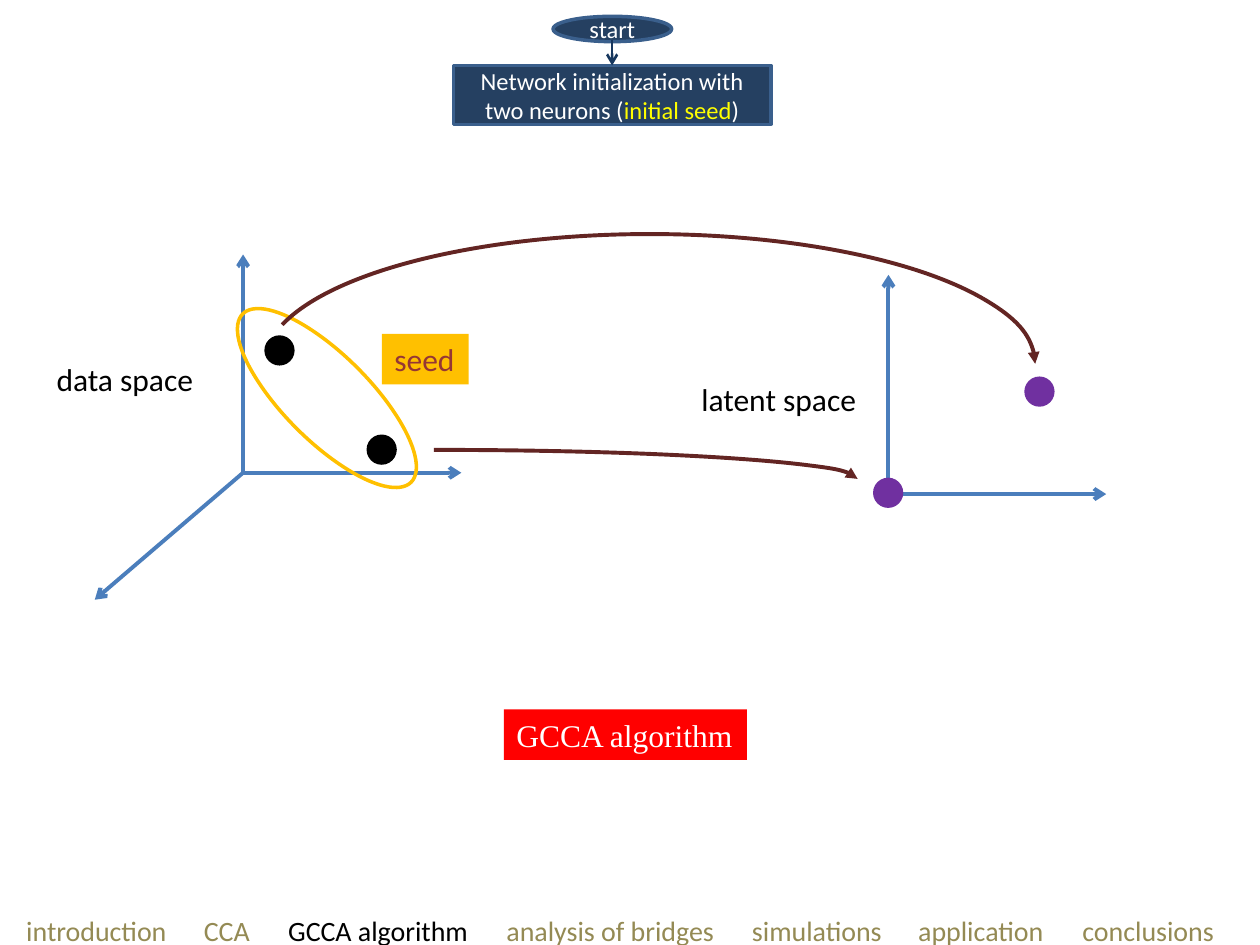
from dataclasses import dataclass

import pptx
import pptx.dml.color
import pptx.enum.shapes
import pptx.enum.text
import pptx.oxml
import pptx.oxml.ns
import pptx.util

Cm, Pt = pptx.util.Cm, pptx.util.Pt
RGBColor = pptx.dml.color.RGBColor
SHAPE = pptx.enum.shapes.MSO_SHAPE
CENTER = pptx.enum.text.PP_ALIGN.CENTER
qn = pptx.oxml.ns.qn

WHITE = RGBColor(0xFF, 0xFF, 0xFF)
BLACK = RGBColor(0x00, 0x00, 0x00)
YELLOW = RGBColor(0xFF, 0xFF, 0x00)
RED = RGBColor(0xFF, 0x00, 0x00)
NAVY = RGBColor(0x25, 0x40, 0x61)
STEEL = RGBColor(0x3A, 0x5F, 0x8C)
FLOW_BLUE = RGBColor(0x17, 0x37, 0x5E)
AXIS_BLUE = RGBColor(0x4B, 0x7E, 0xBC)
AMBER = RGBColor(0xFF, 0xC0, 0x00)
BROWN = RGBColor(0x95, 0x37, 0x35)
PURPLE = RGBColor(0x70, 0x30, 0xA0)
MAROON = RGBColor(0x63, 0x25, 0x23)
OLIVE = RGBColor(0x94, 0x8A, 0x54)

DOT = 0.61  # neuron diameter, cm


@dataclass
class Box:
    """A rectangle in centimetres."""
    x: float
    y: float
    w: float
    h: float

    def emu(self):
        return Cm(self.x), Cm(self.y), Cm(self.w), Cm(self.h)


@dataclass
class Run:
    text: str
    color: RGBColor


@dataclass
class Label:
    box: Box
    run: Run
    fill: RGBColor | None = None
    font: str = "Calibri"
    wrap: bool = False


@dataclass
class Axes:
    origin: tuple[float, float]
    tips: list[tuple[float, float]]


@dataclass
class Neuron:
    x: float
    y: float
    color: RGBColor


def add_runs(p, runs: list[Run], size: float, font: str = "Calibri") -> None:
    for run in runs:
        r = p.add_run()
        r.text = run.text
        r.font.size, r.font.name = Pt(size), font
        r.font.color.rgb = run.color


def add_outline(shapes, kind, box: Box, fill=None, line=None, width: float = 2):
    sp = shapes.add_shape(kind, *box.emu())
    sp.shadow.inherit = False
    if fill is None:
        sp.fill.background()
    else:
        sp.fill.solid()
        sp.fill.fore_color.rgb = fill
    if line is None:
        sp.line.fill.background()
    else:
        sp.line.color.rgb = line
        sp.line.width = Pt(width)
    return sp


def add_arrowhead(sp, kind: str) -> None:
    pptx.oxml.ns  # namespace map used by qn
    end = sp.line._get_or_add_ln().makeelement(qn("a:tailEnd"), {"type": kind})
    sp.line._get_or_add_ln().append(end)


def add_arrow(shapes, start, end, color: RGBColor, width: float) -> None:
    points = [Cm(v) for v in (*start, *end)]
    sp = shapes.add_connector(pptx.enum.shapes.MSO_CONNECTOR.STRAIGHT, *points)
    sp.line.color.rgb = color
    sp.line.width = Pt(width)
    add_arrowhead(sp, "arrow")
    sp_pr = sp._element.spPr
    sp_pr.append(sp_pr.makeelement(qn("a:effectLst"), {}))


def add_step(shapes, kind, box: Box, runs: list[Run]) -> None:
    """Draw one step of the flow chart."""
    tf = add_outline(shapes, kind, box, NAVY, STEEL).text_frame
    tf.vertical_anchor = pptx.enum.text.MSO_ANCHOR.MIDDLE
    tf.paragraphs[0].alignment = CENTER
    add_runs(tf.paragraphs[0], runs, 14)


def add_label(shapes, label: Label) -> None:
    sp = shapes.add_textbox(*label.box.emu())
    if label.fill is not None:
        sp.fill.solid()
        sp.fill.fore_color.rgb = label.fill
    tf = sp.text_frame
    tf.word_wrap = label.wrap
    tf.auto_size = pptx.enum.text.MSO_AUTO_SIZE.SHAPE_TO_FIT_TEXT
    add_runs(tf.paragraphs[0], [label.run], 18, label.font)


def add_mapping(shapes, box: Box, start_angle: float | None = None) -> None:
    """Draw a curved arrow from data space to latent space."""
    sp = add_outline(shapes, SHAPE.ARC, box, line=MAROON, width=2.25)
    if start_angle is not None:
        sp.adjustments[0] = start_angle
    add_arrowhead(sp, "triangle")


def add_agenda(shapes, sections: list[str], current: str, tabs: list[float]) -> None:
    tf = shapes.add_textbox(*Box(0, 18.29, 25.4, 0.94).emu()).text_frame
    tf.word_wrap = True
    tf.margin_left = Cm(0.53)
    p = tf.paragraphs[0]
    p_pr = p._p.get_or_add_pPr()
    tab_list = p_pr.makeelement(qn("a:tabLst"), {})
    p_pr.append(tab_list)
    for tab in tabs:
        attributes = {"pos": str(Cm(tab)), "algn": "l"}
        tab_list.append(tab_list.makeelement(qn("a:tab"), attributes))
    runs = [Run(("\t" if i else "") + name, BLACK if name == current else OLIVE)
            for i, name in enumerate(sections)]
    add_runs(p, runs, 16)


STEPS = [
    (SHAPE.OVAL, Box(11.15, 0.33, 2.39, 0.51), [Run("start", WHITE)]),
    (SHAPE.RECTANGLE, Box(9.14, 1.32, 6.4, 1.19),
     [Run("Network initialization with two neurons (", WHITE),
      Run("initial seed", YELLOW), Run(")", WHITE)]),
]
SPACES = [
    Axes((17.91, 9.96), [(17.91, 5.54), (22.3, 9.96)]),
    Axes((4.9, 9.53), [(4.9, 5.13), (1.91, 12.09), (9.3, 9.53)]),
]
LABELS = [
    Label(Box(10.16, 14.3, 4.9, 1.02), Run("GCCA algorithm", WHITE), RED,
          "Times New Roman"),
    Label(Box(13.89, 7.54, 3.66, 1.02), Run("latent space", BLACK)),
    Label(Box(0.89, 7.14, 3.35, 1.02), Run("data space", BLACK)),
    Label(Box(7.7, 6.73, 1.75, 1.02), Run("seed", BROWN), AMBER, wrap=True),
]
NEURONS = [Neuron(7.39, 8.76, BLACK), Neuron(5.33, 6.76, BLACK),
           Neuron(17.6, 9.63, PURPLE), Neuron(20.65, 7.59, PURPLE)]
SECTIONS = ["introduction", "CCA", "GCCA algorithm", "analysis of bridges",
            "simulations", "application", "conclusions"]
SECTION_TABS = [3.58, 5.28, 9.68, 14.63, 17.98, 21.29]


def main() -> None:
    prs = pptx.Presentation()
    prs.slide_width, prs.slide_height = Cm(25.4), Cm(19.05)
    shapes = prs.slides.add_slide(prs.slide_layouts[6]).shapes

    for kind, box, runs in STEPS:
        add_step(shapes, kind, box, runs)
    add_arrow(shapes, (12.34, 0.81), (12.34, 1.32), FLOW_BLUE, 1.5)

    for axes in SPACES:
        for tip in axes.tips:
            add_arrow(shapes, axes.origin, tip, AXIS_BLUE, 2.25)
    for n in NEURONS:
        add_outline(shapes, SHAPE.OVAL, Box(n.x, n.y, DOT, DOT), n.color)
    seed = add_outline(shapes, SHAPE.OVAL, Box(4.19, 7.16, 4.8, 1.73), line=AMBER)
    seed.rotation = 45
    for label in LABELS:
        add_label(shapes, label)

    add_mapping(shapes, Box(0.2, 9.07, 17.09, 1.17))
    add_mapping(shapes, Box(5.33, 4.72, 15.54, 5.23), 111.64)
    add_agenda(shapes, SECTIONS, "GCCA algorithm", SECTION_TABS)
    prs.save("out.pptx")


if __name__ == "__main__":
    main()
